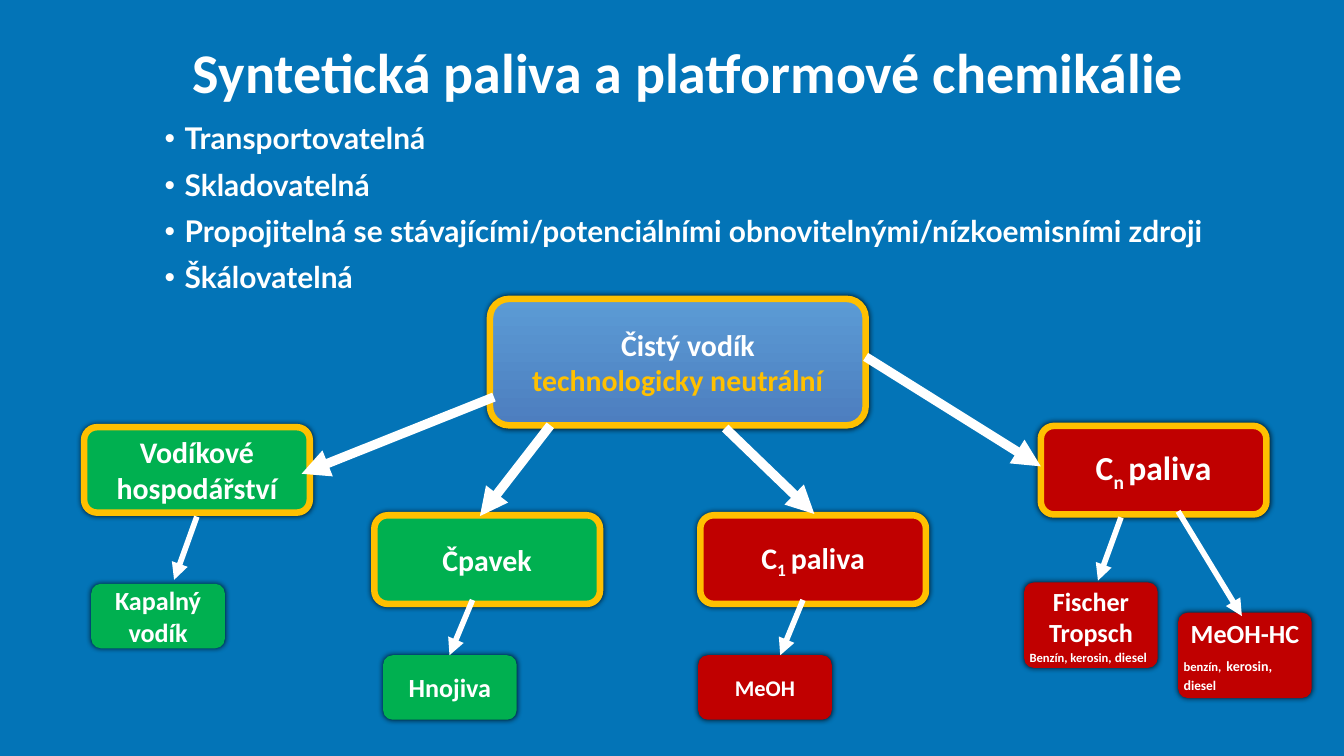
from dataclasses import dataclass

from lxml import etree
from pptx import Presentation
from pptx.dml.color import RGBColor
from pptx.enum.shapes import MSO_CONNECTOR, MSO_SHAPE
from pptx.enum.text import MSO_ANCHOR, MSO_AUTO_SIZE, PP_ALIGN
from pptx.oxml.ns import qn
from pptx.util import Cm, Pt

ROUND = MSO_SHAPE.ROUNDED_RECTANGLE
LINE = MSO_CONNECTOR.STRAIGHT
MIDDLE = MSO_ANCHOR.MIDDLE
LEFT, CENTER = PP_ALIGN.LEFT, PP_ALIGN.CENTER

BLUE, WHITE, GOLD = "0374B7", "FFFFFF", "FFC000"
GREEN, RED = "00B050", "C00000"
BIG, SMALL, TALL = (8.53, 3.35), (5.05, 2.44), (5.05, 3.23)


@dataclass
class Run:
    text: str
    size: float
    color: str = WHITE
    base: int = 0


@dataclass
class Para:
    runs: list[Run]
    align: PP_ALIGN = CENTER
    indent: float = 0


@dataclass
class Box:
    left: float
    top: float
    size: tuple[float, float]
    fills: list[str]
    paras: list[Para]
    edge: bool = False
    curve: float = 0.15


@dataclass
class Arrow:
    start: tuple[float, float]
    end: tuple[float, float]
    width: float


def label(text: str, size: float) -> list[Para]:
    return [Para([Run(text, size)])]


BOXES = [
    Box(18.52, 11.3, (14.2, 4.78), ["5B9BD5", "4D7EBF"], [
        Para([Run("Čistý vodík", 32)], indent=0.77),
        Para([Run("technologicky neutrální", 32, GOLD)])], True),
    Box(3.18, 16.15, (8.53, 3.23), [GREEN], label("Vodíkové hospodářství", 32), True),
    Box(14.15, 19.48, BIG, [GREEN], label("Čpavek", 32), True),
    Box(3.45, 22.07, SMALL, [GREEN], label("Kapalný vodík", 28)),
    Box(14.48, 24.77, SMALL, [GREEN], label("Hnojiva", 28)),
    Box(26.47, 19.48, BIG, [RED], [
        Para([Run("C", 32), Run("1", 32, base=-25), Run(" ", 24), Run("paliva", 32)])], True),
    Box(26.39, 24.77, SMALL, [RED], label("MeOH", 24)),
    Box(39.34, 16.1, BIG, [RED], [
        Para([Run("C", 36), Run("n ", 36, base=-25), Run("paliva", 36)])], True),
    Box(38.71, 22.02, TALL, [RED], label("Fischer Tropsch", 28) + [
        Para([Run("Benzín, kerosin,", 13.5), Run(" ", 15), Run("diesel", 14.2)], LEFT)],
        curve=0.114),
    Box(44.53, 23.16, TALL, [RED], label("MeOH-HC", 28) + [
        Para([Run("benzín,", 13.5), Run(" ", 24), Run("kerosin, d", 15),
              Run("iesel", 14.2)], LEFT)], curve=0.114),
]

ARROWS = [
    Arrow((18.67, 15.01), (11.4, 17.91), 10),
    Arrow((20.8, 16.08), (18.14, 19.51), 10),
    Arrow((27.41, 16.18), (30.78, 19.43), 10),
    Arrow((32.72, 13.49), (39.34, 17.63), 10),
    Arrow((7.44, 19.53), (6.58, 21.92), 6),
    Arrow((17.86, 22.68), (16.99, 24.77), 6),
    Arrow((30.35, 22.68), (29.49, 24.77), 6),
    Arrow((42.37, 19.56), (41.5, 21.95), 6),
    Arrow((44.53, 19.33), (46.94, 23.29), 6),
]

POINTS = [
    "Transportovatelná",
    "Skladovatelná",
    "Propojitelná se stávajícími/potenciálními obnovitelnými/nízkoemisními zdroji",
    "Škálovatelná",
]


def rgb(code: str) -> RGBColor:
    return RGBColor.from_string(code)


def write(para, text: str, *, size: float, color: str = WHITE,
          font: str = "Calibri", base: int = 0) -> None:
    run = para.add_run()
    run.text = text
    run.font.name, run.font.size, run.font.bold = font, Pt(size), True
    run.font.color.rgb = rgb(color)
    if base:
        run.font._element.set("baseline", str(base * 1000))


def add_glow(shape) -> None:
    """Give the shape a soft dark shadow on all sides."""
    shape.shadow.inherit = False
    effects = shape._element.spPr.find(qn("a:effectLst"))
    outer = etree.SubElement(effects, qn("a:outerShdw"), blurRad=str(Pt(6)),
                             dist="0", dir="18900000", rotWithShape="0")
    tint = etree.SubElement(outer, qn("a:srgbClr"), val="000000")
    etree.SubElement(tint, qn("a:alpha"), val="80000")


def draw_box(slide, box: Box) -> None:
    shape = slide.shapes.add_shape(ROUND, Cm(box.left), Cm(box.top), *map(Cm, box.size))
    shape.adjustments[0] = box.curve
    if len(box.fills) > 1:
        shape.fill.gradient()
        shape.fill.gradient_angle = 270
        for stop, code in zip(shape.fill.gradient_stops, box.fills):
            stop.color.rgb = rgb(code)
    else:
        shape.fill.solid()
        shape.fill.fore_color.rgb = rgb(box.fills[0])
    if box.edge:
        shape.line.color.rgb = rgb(GOLD)
        shape.line.width = Pt(7)
    else:
        shape.line.fill.background()
    add_glow(shape)

    frame = shape.text_frame
    frame.word_wrap = True
    frame.vertical_anchor = MIDDLE
    frame.margin_left = frame.margin_right = Cm(0.1)
    frame.margin_top = frame.margin_bottom = Cm(0.1)
    for i, item in enumerate(box.paras):
        para = frame.add_paragraph() if i else frame.paragraphs[0]
        para.alignment = item.align
        if item.indent:
            para._p.get_or_add_pPr().set("marL", str(Cm(item.indent)))
        for run in item.runs:
            write(para, run.text, size=run.size, color=run.color, base=run.base)


def draw_arrow(slide, arrow: Arrow) -> None:
    link = slide.shapes.add_connector(LINE, *map(Cm, arrow.start + arrow.end))
    link.line.color.rgb = rgb(WHITE)
    link.line.width = Pt(arrow.width)
    props = link._element.spPr
    etree.SubElement(props.find(qn("a:ln")), qn("a:tailEnd"), type="triangle")
    etree.SubElement(props, qn("a:effectLst"))


def set_title(slide, text: str) -> None:
    title = slide.shapes.title
    title.left, title.top, title.width, title.height = map(Cm, (7.04, 0.79, 43.36, 4.09))
    frame = title.text_frame
    frame.auto_size = MSO_AUTO_SIZE.NONE
    frame.vertical_anchor = MIDDLE
    para = frame.paragraphs[0]
    para.alignment, para.line_spacing = LEFT, 0.9
    write(para, text, size=60)


def draw_list(slide, points: list[str]) -> None:
    frame = slide.shapes.add_textbox(*map(Cm, (5.97, 4.57, 44.68, 7.9))).text_frame
    frame.word_wrap = True
    for i, text in enumerate(points):
        para = frame.add_paragraph() if i else frame.paragraphs[0]
        props = para._p.get_or_add_pPr()
        props.set("marL", str(Cm(0.76)))
        props.set("indent", str(-Cm(0.76)))
        etree.SubElement(props, qn("a:buFont"), typeface="Arial")
        etree.SubElement(props, qn("a:buChar"), char="•")
        para.line_spacing = 0.9
        para.space_before = Pt(15 if i else 0)
        write(para, text, size=32, font="Lato")


def main() -> None:
    deck = Presentation()
    deck.slide_width, deck.slide_height = Cm(50.8), Cm(28.58)
    slide = deck.slides.add_slide(deck.slide_layouts[5])
    slide.background.fill.solid()
    slide.background.fill.fore_color.rgb = rgb(BLUE)
    set_title(slide, "Syntetická paliva a platformové chemikálie")
    for box in BOXES:
        draw_box(slide, box)
    for arrow in ARROWS:
        draw_arrow(slide, arrow)
    draw_list(slide, POINTS)
    deck.save("out.pptx")


if __name__ == "__main__":
    main()
